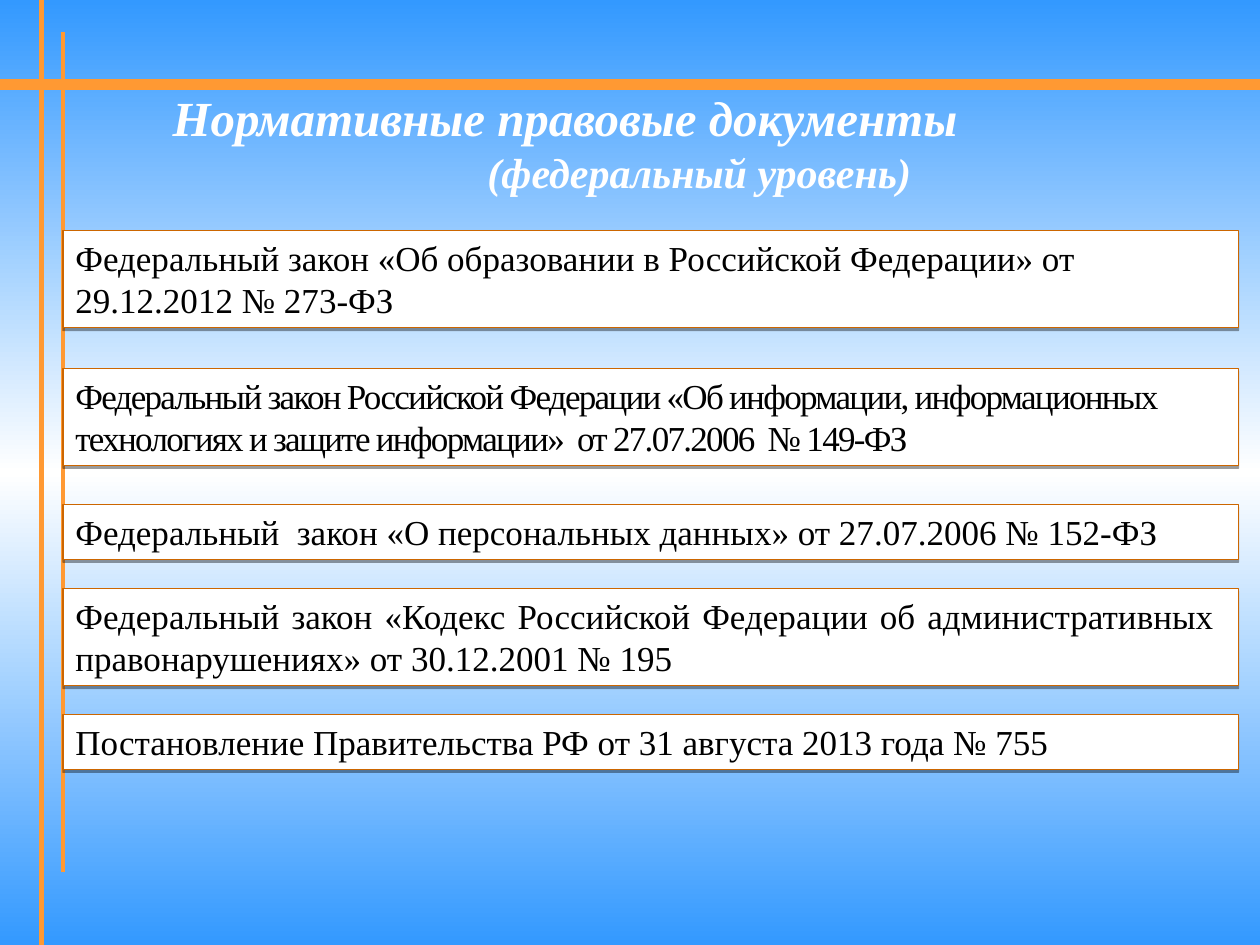
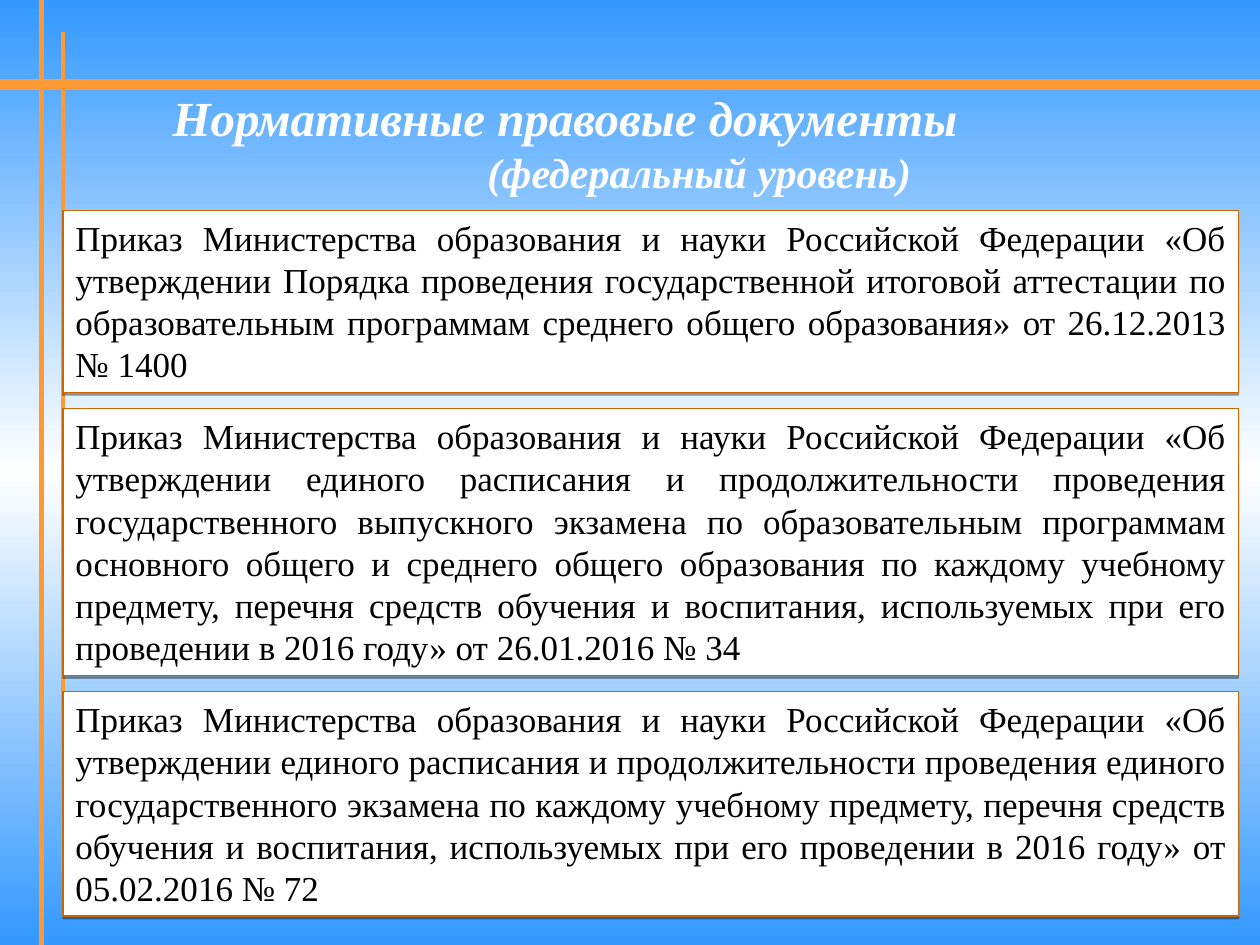
import pptx
import pptx.util
import pptx.dml.color
import pptx.enum.shapes
import pptx.enum.text
import pptx.oxml.ns
from lxml import etree

Inches = pptx.util.Inches
Pt = pptx.util.Pt
qn = pptx.oxml.ns.qn
ALIGN = pptx.enum.text.PP_ALIGN
ANCHOR = pptx.enum.text.MSO_ANCHOR
AUTO_SIZE = pptx.enum.text.MSO_AUTO_SIZE

COLORS = {"sky": "3399FF", "white": "FFFFFF", "rule": "FF9933", "border": "CC6600", "ink": "000000"}
FONT = "Times New Roman"
BODY_FONT = {"name": FONT, "size": Pt(20)}
TITLE_FONT = {"name": FONT, "bold": True, "italic": True}
TITLE_BOX = (0.59, 0.67, 9.24, 0.92)
TITLE_LINES = [
    ("Нормативные правовые документы", 28, ALIGN.LEFT, 0.68),
    ("(федеральный уровень)", 24, ALIGN.CENTER, 0),
]
RULES = [
    ((0, 0.67, 10, 0.67), 6),
    ((0.33, 0, 0.33, 7.5), 3),
    ((0.5, 0.25, 0.5, 6.92), 2.25),
]
CARD_LEFT, CARD_WIDTH = 0.5, 9.33
CARD_PADDING, LINE_HEIGHT = 0.1, 0.336

LAWS = [
    {"text": "Федеральный закон «Об образовании в Российской Федерации» от 29.12.2012 № 273-ФЗ",
     "lines": 2, "gap": 0.32},
    {"text": "Федеральный закон Российской Федерации «Об информации, информационных технологиях "
             "и защите информации»  от 27.07.2006  № 149-ФЗ",
     "lines": 2, "gap": 0.31, "tracking": -100},
    {"text": "Федеральный  закон «О персональных данных» от 27.07.2006 № 152-ФЗ",
     "lines": 1, "gap": 0.23},
    {"text": "Федеральный закон «Кодекс Российской Федерации об административных  "
             "правонарушениях» от 30.12.2001 № 195",
     "lines": 2, "gap": 0.23, "align": ALIGN.JUSTIFY},
    {"text": "Постановление Правительства РФ от 31 августа 2013 года № 755", "lines": 1, "gap": 0},
]

ORDER_START = "Приказ Министерства образования и науки Российской Федерации «Об утверждении "
ORDERS = [
    {"text": ORDER_START + text, "lines": lines, "gap": 0.13, "align": ALIGN.JUSTIFY}
    for text, lines in [
        ("Порядка проведения государственной итоговой аттестации по образовательным программам "
         "среднего общего образования» от 26.12.2013 № 1400", 4),
        ("единого расписания и продолжительности проведения государственного выпускного экзамена "
         "по образовательным программам основного общего и среднего общего образования по каждому "
         "учебному предмету, перечня средств обучения и воспитания, используемых при его "
         "проведении в 2016 году» от 26.01.2016 № 34", 6),
        ("единого расписания и продолжительности проведения единого государственного экзамена по "
         "каждому учебному предмету, перечня средств обучения и воспитания, используемых при его "
         "проведении в 2016 году» от 05.02.2016 № 72", 5),
    ]
]


def rgb(name):
    """Return the named colour."""
    return pptx.dml.color.RGBColor.from_string(COLORS[name])


def set_values(target, values):
    """Set every attribute listed in values."""
    for name, value in values.items():
        setattr(target, name, value)


def set_background(master):
    """Fill the master with a vertical sky gradient, white in the middle."""
    fill = master.background.fill
    fill.gradient()
    fill.gradient_angle = 270
    stops = master.element.find(".//" + qn("a:gsLst"))
    for stop in list(stops):
        stops.remove(stop)
    for percent, name in ((0, "sky"), (50, "white"), (100, "sky")):
        stop = etree.SubElement(stops, qn("a:gs"), pos=str(percent * 1000))
        etree.SubElement(stop, qn("a:srgbClr"), val=COLORS[name])


def add_rules(page):
    """Draw the crossing orange rules."""
    for ends, width in RULES:
        rule = page.shapes.add_connector(
            pptx.enum.shapes.MSO_CONNECTOR.STRAIGHT, *(Inches(value) for value in ends))
        rule.line.color.rgb = rgb("rule")
        rule.line.width = Pt(width)
        etree.SubElement(rule.element.spPr, qn("a:effectLst"))


def add_title(page, box):
    """Place the two-line title, with its first line indented from the left."""
    title = page.shapes.title
    set_values(title, dict(zip(("left", "top", "width", "height"), map(Inches, box))))
    frame = title.text_frame
    set_values(frame, {"word_wrap": True, "auto_size": AUTO_SIZE.NONE,
                       "vertical_anchor": ANCHOR.MIDDLE})
    for index, (text, size, align, indent) in enumerate(TITLE_LINES):
        para = frame.add_paragraph() if index else frame.paragraphs[0]
        para.alignment = align
        if indent:
            para._p.get_or_add_pPr().set("marL", str(Inches(indent)))
        span = para.add_run()
        span.text = text
        set_values(span.font, TITLE_FONT | {"size": Pt(size)})
        span.font.color.rgb = rgb("white")


def add_shadow(shape):
    """Give the shape a thin sharp shadow below it."""
    shape.shadow.inherit = False
    effects = shape.element.spPr.find(qn("a:effectLst"))
    shadow = etree.SubElement(effects, qn("a:outerShdw"), blurRad="0", dist=str(Pt(1.6)),
                              dir="5400000", rotWithShape="0")
    color = etree.SubElement(shadow, qn("a:srgbClr"), val=COLORS["ink"])
    etree.SubElement(color, qn("a:alpha"), val="38000")


def add_card(page, box, document):
    """Add a bordered white card naming one document."""
    card = page.shapes.add_shape(
        pptx.enum.shapes.MSO_SHAPE.RECTANGLE, *(Inches(value) for value in box))
    card.fill.solid()
    card.fill.fore_color.rgb = rgb("white")
    card.line.color.rgb = rgb("border")
    card.line.width = Pt(0.75)
    add_shadow(card)
    frame = card.text_frame
    set_values(frame, {"word_wrap": True, "auto_size": AUTO_SIZE.SHAPE_TO_FIT_TEXT,
                       "vertical_anchor": ANCHOR.TOP})
    para = frame.paragraphs[0]
    para.alignment = document.get("align", ALIGN.LEFT)
    span = para.add_run()
    span.text = document["text"]
    set_values(span.font, BODY_FONT)
    span.font.color.rgb = rgb("ink")
    if "tracking" in document:
        span._r.get_or_add_rPr().set("spc", str(document["tracking"]))


def add_documents_page(deck, top, documents):
    """Add a titled page with document cards stacked from the given top."""
    page = deck.slides.add_slide(deck.slide_layouts[5])
    add_rules(page)
    add_title(page, TITLE_BOX)
    for document in documents:
        height = CARD_PADDING + LINE_HEIGHT * document["lines"]
        add_card(page, (CARD_LEFT, top, CARD_WIDTH, height), document)
        top += height + document["gap"]


def main():
    """Build and save the deck."""
    deck = pptx.Presentation()
    set_values(deck, {"slide_width": Inches(10), "slide_height": Inches(7.5)})
    set_background(deck.slide_master)
    add_documents_page(deck, 1.83, LAWS)
    add_documents_page(deck, 1.67, ORDERS)
    deck.save("out.pptx")


if __name__ == "__main__":
    main()
